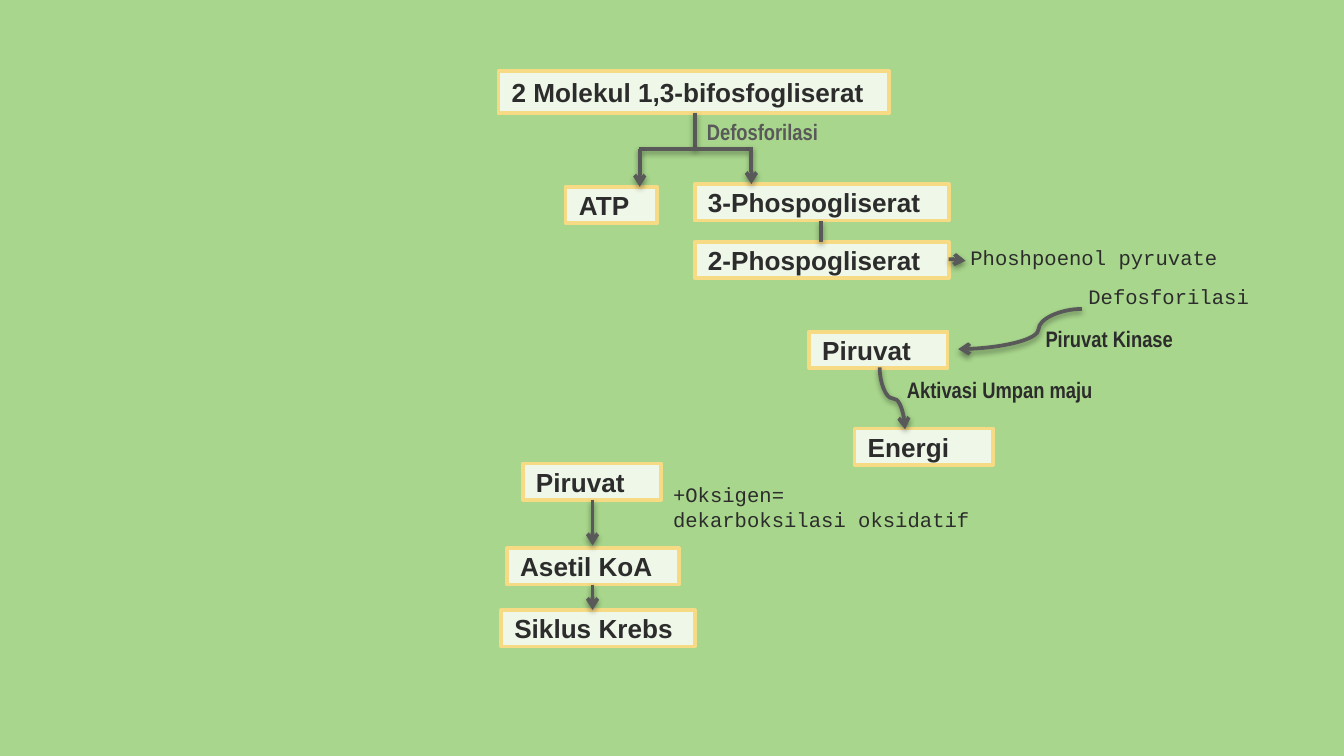
from lxml.etree import SubElement
from pptx import Presentation
from pptx.dml.color import RGBColor
from pptx.enum.shapes import MSO_CONNECTOR, MSO_SHAPE
from pptx.enum.text import MSO_ANCHOR, PP_ALIGN
from pptx.oxml.ns import qn
from pptx.util import Cm, Pt

GREEN = RGBColor(0xA8, 0xD6, 0x8C)
PALE = RGBColor(0xEE, 0xF7, 0xE8)
GOLD = RGBColor(0xF7, 0xDA, 0x84)
DARK = RGBColor(0x2C, 0x2C, 0x2C)
GRAY = RGBColor(0x59, 0x59, 0x59)
NARROW = "Arial Narrow"
MONO = "Courier New"


def add(node, tag, **attrs):
    return SubElement(node, qn(tag), attrs)


class Chart:
    """Style and current slide of the flow chart."""

    def __init__(self, slide):
        self.slide = slide
        self.slide.background.fill.solid()
        self.slide.background.fill.fore_color.rgb = GREEN

    def words(self, para, text, font, size, color, bold):
        run = para.add_run()
        run.text = text
        run.font.name = font
        run.font.size = Pt(size)
        run.font.bold = bold
        run.font.color.rgb = color

    def stroke(self, shape, color):
        shape.line.color.rgb = color
        shape.line.width = Pt(2)
        add(shape._element.spPr.find(qn("a:ln")), "a:round")

    def box(self, text, x, y, w, h=0.69):
        shape = self.slide.shapes.add_shape(
            MSO_SHAPE.RECTANGLE, Cm(x), Cm(y), Cm(w), Cm(h))
        shape.fill.solid()
        shape.fill.fore_color.rgb = PALE
        self.stroke(shape, GOLD)
        shape.shadow.inherit = False
        frame = shape.text_frame
        frame.vertical_anchor = MSO_ANCHOR.MIDDLE
        para = frame.paragraphs[0]
        para.alignment = PP_ALIGN.LEFT
        self.words(para, text, "Arial", 14, DARK, True)

    def label(self, lines, x, y, w, h, font, color=DARK):
        frame = self.slide.shapes.add_textbox(
            Cm(x), Cm(y), Cm(w), Cm(h)).text_frame
        frame.word_wrap = True
        frame.margin_left = frame.margin_right = Cm(0.25)
        frame.margin_top = frame.margin_bottom = Cm(0.25)
        for i, text in enumerate(lines):
            para = frame.add_paragraph() if i else frame.paragraphs[0]
            props = para._p.get_or_add_pPr()
            props.set("marL", str(Cm(0.46)))
            props.set("indent", "0")
            bold = font == NARROW
            self.words(para, text, font, 12 if bold else 11, color, bold)

    def link(self, x1, y1, x2, y2, head=True, kind=MSO_CONNECTOR.STRAIGHT):
        line = self.slide.shapes.add_connector(
            kind, Cm(x1), Cm(y1), Cm(x2), Cm(y2))
        self.stroke(line, GRAY)
        props = line._element.spPr
        if head:
            add(props.find(qn("a:ln")), "a:tailEnd", type="arrow")
        # Soft shadow straight below
        effects = add(props, "a:effectLst")
        shadow = add(effects, "a:outerShdw", blurRad=str(Pt(3.1)),
                     dist=str(Pt(1.6)), dir="5400000", rotWithShape="0")
        black = add(shadow, "a:srgbClr", val="000000")
        add(black, "a:alpha", val="38000")
        return line

    def curve(self, x1, y1, x2, y2, bend=0.5, turn=0):
        line = self.link(x1, y1, x2, y2, kind=MSO_CONNECTOR.CURVE)
        props = line._element.spPr
        if turn:
            props.find(qn("a:xfrm")).set("rot", str(turn * 60000))
        guides = props.find(qn("a:prstGeom")).find(qn("a:avLst"))
        add(guides, "a:gd", name="adj1", fmla=f"val {round(bend * 100000)}")


def main():
    deck = Presentation()
    deck.slide_width, deck.slide_height = Cm(25.4), Cm(14.29)
    chart = Chart(deck.slides.add_slide(deck.slide_layouts[6]))

    # Molecules
    chart.box("2 Molekul 1,3-bifosfogliserat", 9.42, 1.35, 7.39, 0.79)
    chart.box("ATP", 10.69, 3.53, 1.73)
    chart.box("3-Phospogliserat", 13.13, 3.48, 4.8)
    chart.box("2-Phospogliserat", 13.13, 4.57, 4.8)
    chart.box("Piruvat", 15.29, 6.27, 2.62)
    chart.box("Energi", 16.15, 8.1, 2.62)

    # Krebs branch
    chart.box("Piruvat", 9.88, 8.76, 2.62)
    chart.box("Asetil KoA", 9.58, 10.36, 3.25)
    chart.box("Siklus Krebs", 9.47, 11.53, 3.66)

    # Fork to ATP and 3-Phospogliserat
    chart.link(13.13, 2.13, 13.13, 2.82, head=False)
    chart.link(12.07, 2.82, 14.17, 2.82, head=False)
    chart.link(12.09, 2.82, 12.09, 3.53)
    chart.link(14.2, 2.77, 14.2, 3.48)

    # Straight links down
    chart.link(15.52, 4.17, 15.52, 4.57, head=False)
    chart.link(11.2, 9.45, 11.2, 10.31)
    chart.link(11.2, 11.05, 11.2, 11.53)

    # Curved links; the last is turned to run downwards
    chart.curve(17.93, 4.9, 18.25, 4.93)
    chart.curve(20.45, 5.84, 18.11, 6.6, bend=0.35)
    chart.curve(17.45, 7.29, 16.28, 7.77, turn=270)

    # Labels
    chart.label(["Defosforilasi"], 12.65, 1.98, 6.15, 0.99, NARROW, GRAY)
    chart.label(["Phoshpoenol pyruvate"], 17.63, 4.39, 5.66, 1.09, MONO)
    chart.label(["Defosforilasi"], 19.86, 5.13, 4.24, 0.71, MONO)
    chart.label(["Piruvat Kinase"], 19.05, 5.89, 4.72, 0.71, NARROW)
    chart.label(["Aktivasi Umpan maju"], 16.43, 6.86, 4.72, 0.71, NARROW)
    chart.label(["+Oksigen=", "dekarboksilasi oksidatif"],
                12.01, 8.86, 9.14, 1.09, MONO)

    deck.save("out.pptx")


if __name__ == "__main__":
    main()
